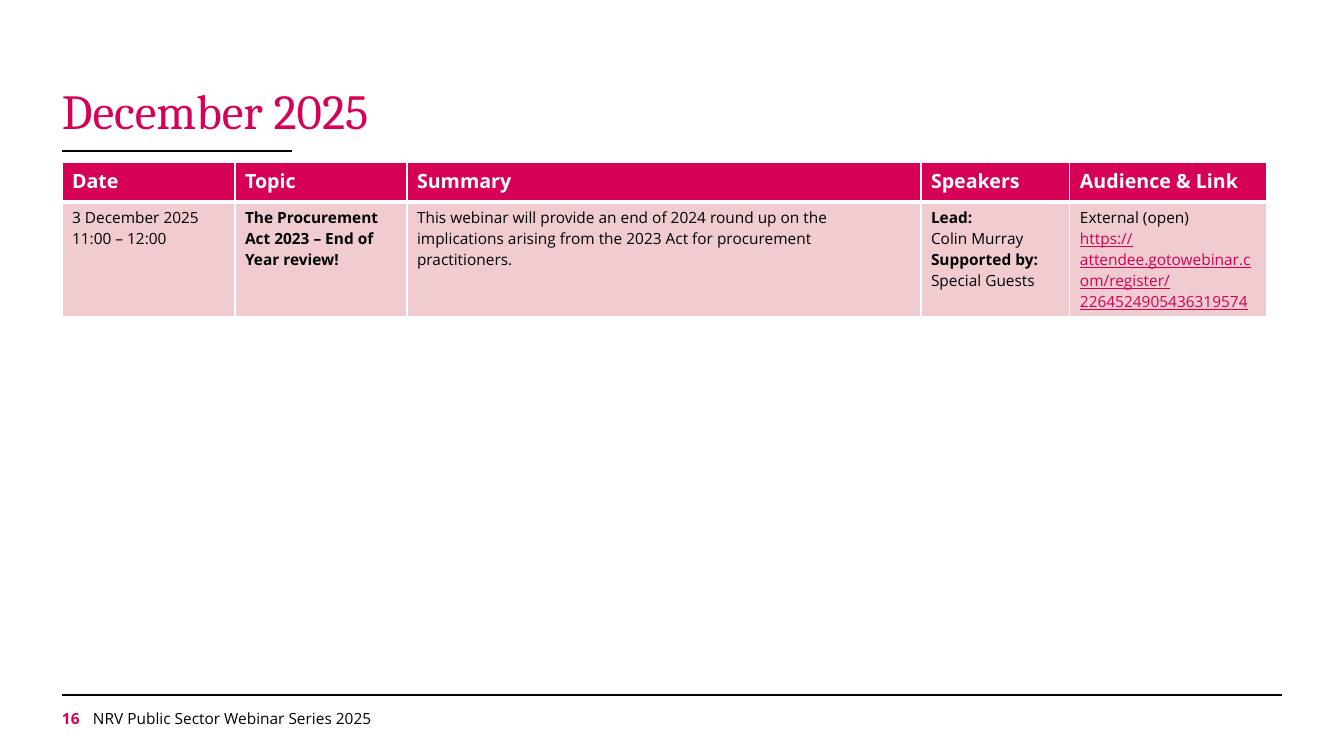
from lxml import etree
from pptx import Presentation
from pptx.dml.color import RGBColor
from pptx.enum.shapes import MSO_CONNECTOR
from pptx.enum.text import MSO_ANCHOR, MSO_AUTO_SIZE, PP_ALIGN
from pptx.oxml.ns import qn
from pptx.util import Emu, Pt

STRAIGHT = MSO_CONNECTOR.STRAIGHT
TOP, BOTTOM = MSO_ANCHOR.TOP, MSO_ANCHOR.BOTTOM
NO_FIT = MSO_AUTO_SIZE.NONE
LEFT_ALIGN = PP_ALIGN.LEFT

EMU_PER_PX = 914400 / 100.8
PINK, PALE, BLACK, WHITE = "D60056", "F0CCD1", "000000", "FFFFFF"
SERIF, SANS = "Cambria", "Open Sans"

LEFT, RIGHT = 62, 1282
COLUMNS = [173, 172, 514, 149, 197]
ROWS = [40, 114]
HEADINGS = ["Date", "Topic", "Summary", "Speakers", "Audience & Link"]
# Each cell is a list of paragraphs, each paragraph a (text, style) pair.
WEBINAR = [
    [("3 December 2025\n11:00 – 12:00", {})],
    [("The Procurement Act 2023 – End of Year review!", {"bold": True})],
    [("This webinar will provide an end of 2024 round up on the implications "
      "arising from the 2023 Act for procurement practitioners.", {})],
    [("Lead:", {"bold": True}), ("Colin Murray", {}),
     ("Supported by:", {"bold": True}), ("Special Guests", {})],
    [("External (open)", {}),
     ("https://attendee.gotowebinar.com/register/2264524905436319574",
      {"color": PINK, "underline": True})],
]


def px(n):
    return Emu(round(n * EMU_PER_PX))


def rgb(color):
    return RGBColor.from_string(color)


class SlideBuilder:
    def __init__(self, prs):
        self.s = prs.slides.add_slide(prs.slide_layouts[5])

    def run(self, p, text, size=11, color=BLACK, font=SANS, bold=False, underline=False):
        """Add text to a paragraph, with a line break at each newline."""
        for i, line in enumerate(text.split("\n")):
            if i:
                p.add_line_break()
            r = p.add_run()
            r.text = line
            r.font.size, r.font.name = Pt(size), font
            r.font.bold, r.font.underline = bold, underline
            r.font.color.rgb = rgb(color)

    def frame(self, sp, x, y, w, h, text, anchor=TOP, **style):
        """Place a text shape with no insets and fill it with one run."""
        sp.left, sp.top, sp.width, sp.height = px(x), px(y), px(w), px(h)
        tf = sp.text_frame
        tf.word_wrap, tf.auto_size, tf.vertical_anchor = True, NO_FIT, anchor
        tf.margin_left = tf.margin_top = tf.margin_right = tf.margin_bottom = 0
        p = tf.paragraphs[0]
        p.alignment = LEFT_ALIGN
        self.run(p, text, **style)

    def title(self, x, y, w, h, text, **style):
        self.frame(self.s.shapes.title, x, y, w, h, text, BOTTOM, **style)

    def text(self, x, y, w, h, text, **style):
        sp = self.s.shapes.add_textbox(0, 0, 0, 0)
        self.frame(sp, x, y, w, h, text, **style)

    def rule(self, x1, x2, y, width):
        line = self.s.shapes.add_connector(STRAIGHT, px(x1), px(y), px(x2), px(y))
        line.line.color.rgb, line.line.width = rgb(BLACK), Pt(width)
        etree.SubElement(line._element.spPr, qn("a:effectLst"))

    def border(self, cell, side, width):
        ln = etree.SubElement(cell._tc.get_or_add_tcPr(), qn("a:ln" + side), w=str(Pt(width)))
        fill = etree.SubElement(ln, qn("a:solidFill"))
        etree.SubElement(fill, qn("a:srgbClr"), val=WHITE)

    def cell(self, cell, paragraphs, fill, top, bottom):
        for side, width in zip("LRTB", (1, 1, top, bottom)):
            self.border(cell, side, width)
        cell.fill.solid()
        cell.fill.fore_color.rgb = rgb(fill)
        tf = cell.text_frame
        for i, (text, style) in enumerate(paragraphs):
            p = tf.add_paragraph() if i else tf.paragraphs[0]
            self.run(p, text, **style)

    def table(self, x, y, columns, rows, headings, body):
        table = self.s.shapes.add_table(len(rows), len(columns), px(x), px(y),
                                        px(sum(columns)), px(sum(rows))).table
        table.first_row = table.horz_banding = False
        for row, h in zip(table.rows, rows):
            row.height = px(h)
        heading_style = {"size": 14, "color": WHITE, "bold": True}
        for c, w in enumerate(columns):
            table.columns[c].width = px(w)
            self.cell(table.cell(0, c), [(headings[c], heading_style)], PINK, 1, 3)
            self.cell(table.cell(1, c), body[c], PALE, 3, 1)


def main():
    prs = Presentation()
    prs.slide_width, prs.slide_height = px(1344), px(756)
    slide = SlideBuilder(prs)
    slide.rule(LEFT, RIGHT, 695, 1)
    slide.rule(LEFT, 292, 151, 1.5)
    slide.title(LEFT, 80, RIGHT - LEFT, 59, "December 2025", size=35, color=PINK, font=SERIF)
    slide.table(LEFT, 162, COLUMNS, ROWS, HEADINGS, WEBINAR)
    slide.text(LEFT, 709, 31, 19, "16", color=PINK, bold=True)
    slide.text(93, 709, RIGHT - 93, 19, "NRV Public Sector Webinar Series 2025")
    prs.save("out.pptx")


if __name__ == "__main__":
    main()
